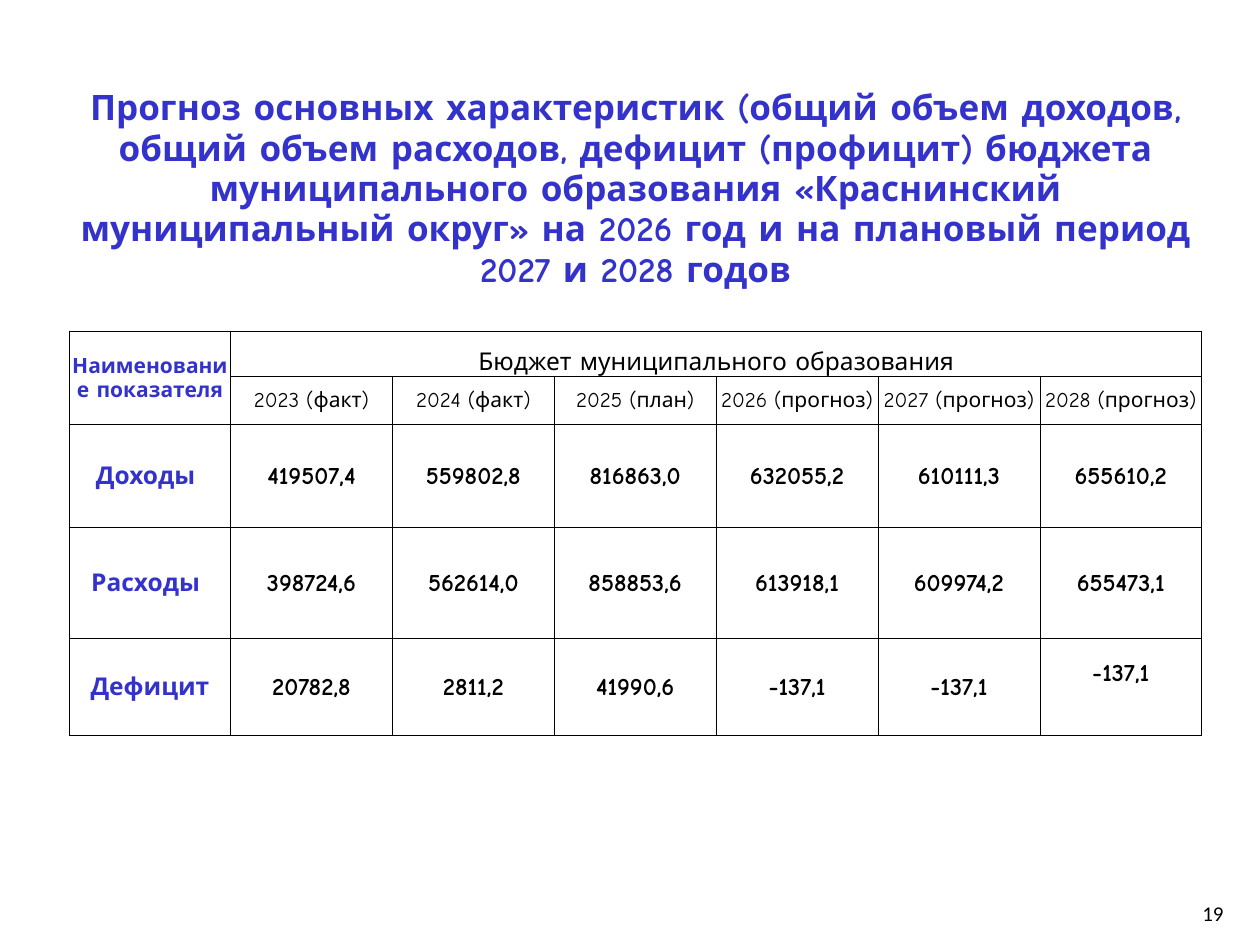
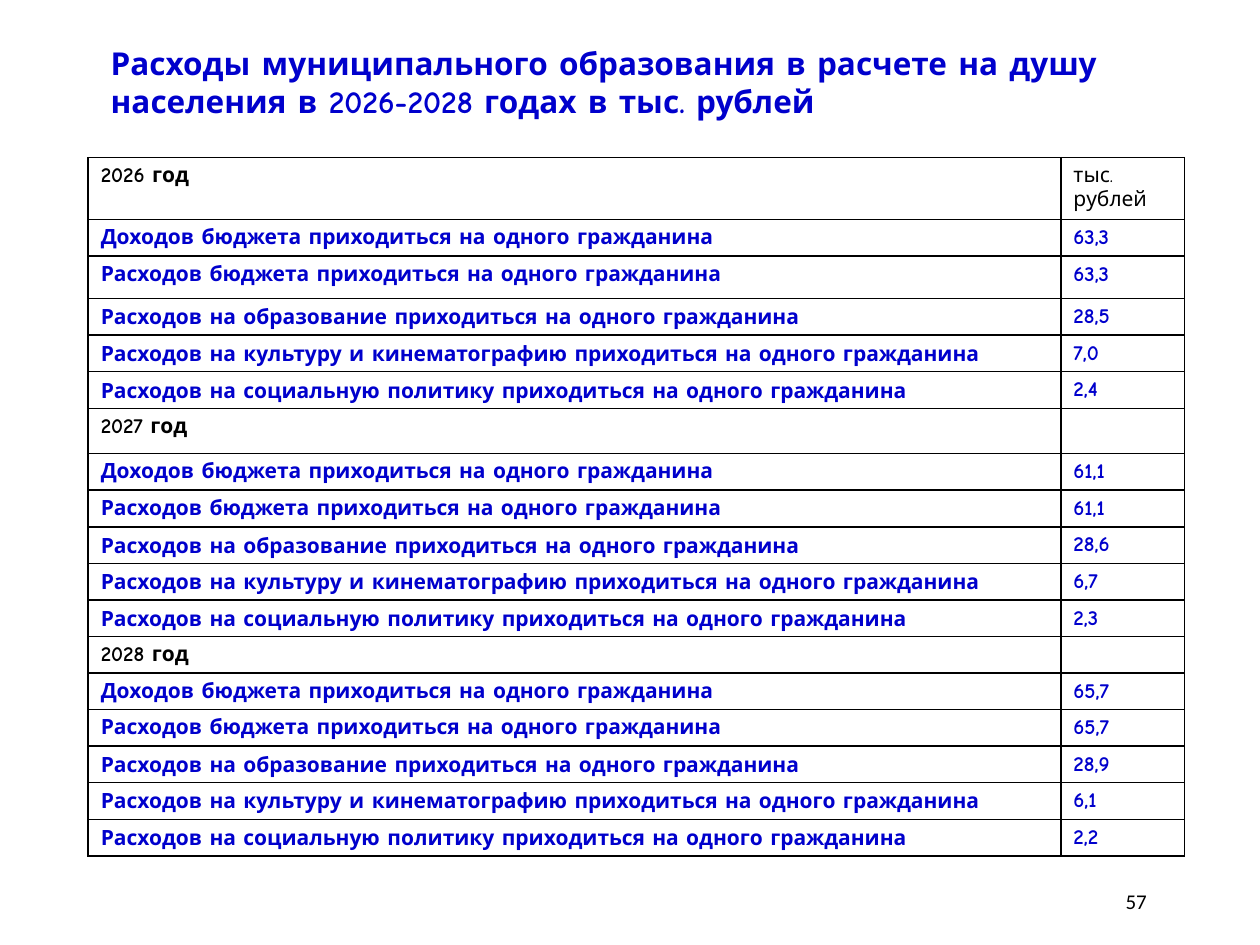
from dataclasses import dataclass

from lxml import etree
from pptx import Presentation
from pptx.dml.color import RGBColor
from pptx.enum.text import MSO_ANCHOR as Anchor, PP_ALIGN as Align
from pptx.oxml.ns import qn
from pptx.util import Inches, Pt

TITLE_FONT = "Comic Neue"
NUMBER_FONT = "Calibri"
BLACK = "000000"
INDIGO = "3333CC"
BLUE = "0000CC"
PLAIN_TABLE_STYLE = "{2D5ABB26-0587-4C30-8999-92F81FD0307C}"


@dataclass(frozen=True)
class TextStyle:
    size: float = 12
    color: str = BLACK
    bold: bool = False
    font: str = TITLE_FONT
    align: Align = Align.LEFT
    anchor: Anchor = Anchor.TOP


@dataclass(frozen=True)
class Box:
    left: float
    top: float
    width: float
    height: float

    def lengths(self) -> tuple:
        return tuple(Inches(v) for v in (self.left, self.top, self.width, self.height))


@dataclass(frozen=True)
class Margins:
    left: float
    top: float
    right: float
    bottom: float


TIGHT = Margins(0.01, 0.01, 0.01, 0)
# Raises the last deficit figure above the middle of its cell.
RAISED = Margins(0.01, 0.01, 0.01, 0.23)
ROOMY = Margins(0.1, 0.05, 0.1, 0.04)

MAIN_TITLE = TextStyle(20, INDIGO, True, align=Align.CENTER)
NAME_HEADER = TextStyle(12, INDIGO, True, align=Align.CENTER, anchor=Anchor.MIDDLE)
GROUP_HEADER = TextStyle(14, align=Align.CENTER, anchor=Anchor.BOTTOM)
YEAR_HEADER = TextStyle(12, align=Align.CENTER, anchor=Anchor.MIDDLE)
ROW_NAME = TextStyle(14, INDIGO, True, align=Align.CENTER, anchor=Anchor.MIDDLE)
AMOUNT = TextStyle(14, BLACK, True, align=Align.CENTER, anchor=Anchor.MIDDLE)
PER_PERSON_TITLE = TextStyle(18, BLUE, True, anchor=Anchor.MIDDLE)
YEAR_ROW = TextStyle(bold=True)
UNIT = TextStyle()
PER_PERSON = TextStyle(12, BLUE, True)
PER_PERSON_LOW = TextStyle(12, BLUE, True, anchor=Anchor.BOTTOM)
PAGE_NUMBER = TextStyle(font=NUMBER_FONT, align=Align.RIGHT, anchor=Anchor.MIDDLE)

YEARS = ["2023 (факт)", "2024 (факт)", "2025 (план)",
         "2026 (прогноз)", "2027 (прогноз)", "2028 (прогноз)"]
BUDGET = {
    "Доходы ": ["419507,4", "559802,8", "816863,0", "632055,2", "610111,3", "655610,2"],
    "Расходы ": ["398724,6", "562614,0", "858853,6", "613918,1", "609974,2", "655473,1"],
    "Дефицит": ["20782,8", "2811,2", "41990,6", "-137,1", "-137,1", "-137,1"],
}
SUBJECTS = ["Доходов бюджета", "Расходов бюджета", "Расходов на образование",
            "Расходов на культуру и кинематографию", "Расходов на социальную политику"]
PER_PERSON_VALUES = {
    "2026 год": ["63,3", "63,3", "28,5", "7,0", "2,4"],
    "2027 год": ["61,1", "61,1", "28,6", "6,7", "2,3"],
    "2028 год": ["65,7", "65,7", "28,9", "6,1", "2,2"],
}


def rgb(value: str) -> RGBColor:
    return RGBColor.from_string(value)


def write_text(paragraph, text: str, style: TextStyle) -> None:
    paragraph.alignment = style.align
    run = paragraph.add_run()
    run.text = text
    run.font.name = style.font
    run.font.size = Pt(style.size)
    run.font.bold = style.bold
    run.font.color.rgb = rgb(style.color)


def add_text(slide, box: Box, text: str, style: TextStyle) -> None:
    frame = slide.shapes.add_textbox(*box.lengths()).text_frame
    frame.word_wrap = True
    frame.vertical_anchor = style.anchor
    write_text(frame.paragraphs[0], text, style)


def add_plain_table(slide, box: Box, widths: list[float], heights: list[float],
                    margins: Margins):
    """Add a table without fills or borders, its empty cells sized for 12 pt text."""
    frame = slide.shapes.add_table(len(heights), len(widths), *box.lengths())
    table = frame.table
    table.first_row = table.horz_banding = False
    table._tbl.tblPr.find(qn("a:tableStyleId")).text = PLAIN_TABLE_STYLE
    for column, width in zip(table.columns, widths):
        column.width = Inches(width)
    for row, height in zip(table.rows, heights):
        row.height = Inches(height)
    for cell in table.iter_cells():
        cell.fill.background()
        set_margins(cell, margins)
        end = etree.SubElement(cell.text_frame.paragraphs[0]._p, qn("a:endParaRPr"))
        end.set("sz", "1200")
    return table


def set_margins(cell, margins: Margins) -> None:
    cell.margin_left = Inches(margins.left)
    cell.margin_top = Inches(margins.top)
    cell.margin_right = Inches(margins.right)
    cell.margin_bottom = Inches(margins.bottom)


def fill_cell(cell, text: str, style: TextStyle) -> None:
    cell.vertical_anchor = style.anchor
    write_text(cell.text_frame.paragraphs[0], text, style)


def set_borders(cell, width: float, sides: str = "LRTB") -> None:
    properties = cell._tc.get_or_add_tcPr()
    for position, side in enumerate(sides):
        line = etree.Element(qn(f"a:ln{side}"), w=str(Pt(width)))
        fill = etree.SubElement(line, qn("a:solidFill"))
        etree.SubElement(fill, qn("a:srgbClr"), val=BLACK)
        properties.insert(position, line)


def build_forecast(slide) -> None:
    add_text(slide, Box(8.98, 7.11, 0.83, 0.27), "19", PAGE_NUMBER)
    table = add_plain_table(slide, Box(0.55, 0.7, 8.98, 5.05), [1.28] + [7.71 / 6] * 6,
                            [1.52, 0.25, 0.36, 0.38, 0.82, 0.88, 0.77], TIGHT)
    for row in range(1, len(table.rows)):
        for column in range(len(table.columns)):
            set_borders(table.cell(row, column), 0.5, "B" if row == 1 else "LRTB")

    table.cell(0, 0).merge(table.cell(0, 6))
    table.cell(2, 0).merge(table.cell(3, 0))
    table.cell(2, 1).merge(table.cell(2, 6))
    fill_cell(table.cell(0, 0),
              "Прогноз основных характеристик (общий объем доходов, общий объем "
              "расходов, дефицит (профицит) бюджета муниципального образования "
              "«Краснинский муниципальный округ» на 2026 год и на плановый период "
              "2027 и 2028 годов", MAIN_TITLE)
    fill_cell(table.cell(2, 0), "Наименование показателя", NAME_HEADER)
    fill_cell(table.cell(2, 1), "Бюджет муниципального образования", GROUP_HEADER)
    for column, year in enumerate(YEARS, start=1):
        fill_cell(table.cell(3, column), year, YEAR_HEADER)
    for row, (name, amounts) in enumerate(BUDGET.items(), start=4):
        fill_cell(table.cell(row, 0), name, ROW_NAME)
        for column, amount in enumerate(amounts, start=1):
            fill_cell(table.cell(row, column), amount, AMOUNT)
    set_margins(table.cell(6, 6), RAISED)


def build_per_person(slide) -> None:
    heights = [0.29] * 18
    heights[0], heights[2], heights[6] = 0.49, 0.34, 0.36
    table = add_plain_table(slide, Box(0.7, 1.25, 8.7, sum(heights)), [7.72, 0.98],
                            heights, ROOMY)
    for cell in table.iter_cells():
        set_borders(cell, 1)

    fill_cell(table.cell(0, 1), "тыс. рублей", UNIT)
    block = len(SUBJECTS) + 1
    for index, (year, values) in enumerate(PER_PERSON_VALUES.items()):
        top = index * block
        fill_cell(table.cell(top, 0), year, YEAR_ROW)
        for offset, (subject, value) in enumerate(zip(SUBJECTS, values), start=1):
            style = PER_PERSON if offset <= 2 else PER_PERSON_LOW
            fill_cell(table.cell(top + offset, 0),
                      f"{subject} приходиться на одного гражданина", style)
            fill_cell(table.cell(top + offset, 1), value, PER_PERSON)

    add_text(slide, Box(0.78, 0, 8.11, 1.3),
             "Расходы муниципального образования в расчете на душу населения "
             "в 2026-2028 годах в тыс. рублей", PER_PERSON_TITLE)
    add_text(slide, Box(6.95, 6.95, 2.25, 0.4), "57", PAGE_NUMBER)


def main() -> None:
    presentation = Presentation()
    presentation.slide_width = Inches(10)
    presentation.slide_height = Inches(7.5)
    blank = presentation.slide_layouts[6]
    for build in (build_forecast, build_per_person):
        build(presentation.slides.add_slide(blank))
    presentation.save("out.pptx")


if __name__ == "__main__":
    main()
